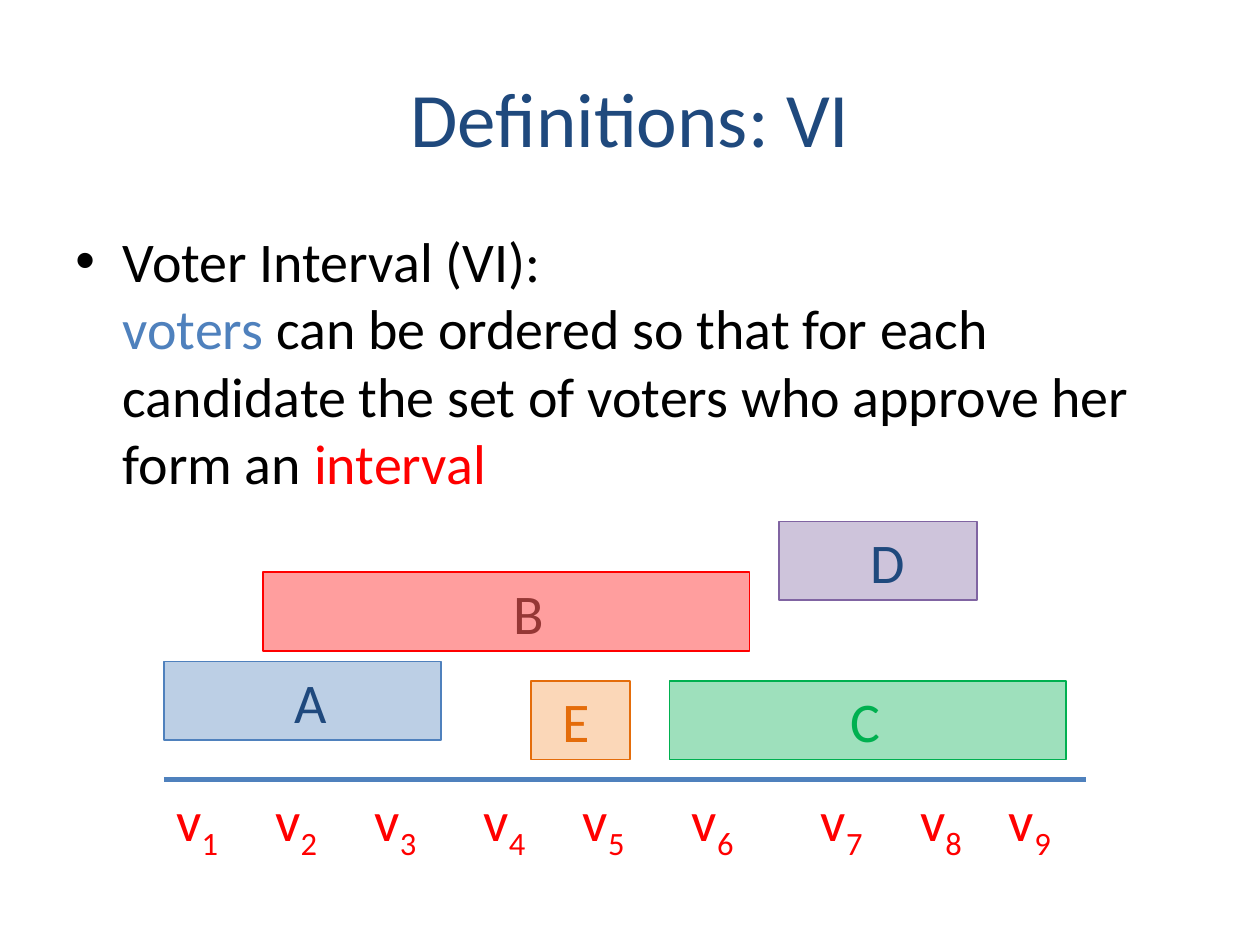
from dataclasses import dataclass

from lxml.etree import SubElement
from pptx import Presentation
from pptx.dml.color import RGBColor
from pptx.enum.shapes import MSO_CONNECTOR, MSO_SHAPE
from pptx.enum.text import MSO_ANCHOR, PP_ALIGN
from pptx.oxml.ns import qn
from pptx.util import Pt


@dataclass(frozen=True)
class Theme:
    font: str = "Calibri"
    head: int = 44
    text: int = 32
    navy: str = "1F497D"
    blue: str = "4F81BD"
    red: str = "FF0000"
    maroon: str = "953735"
    green: str = "00B050"
    purple: str = "8064A2"
    peach: str = "F79646"
    orange: str = "E46C0A"
    black: str = "000000"
    alpha: int = 38


class Sketch:
    """Draws styled elements on the current slide."""

    def __init__(self, theme, slide):
        self.theme = theme
        self.slide = slide

    def run(self, para, text, color, size=None, sub=False):
        run = para.add_run()
        run.text = text
        font = run.font
        font.name = self.theme.font
        font.size = Pt(size or self.theme.text)
        font.color.rgb = RGBColor.from_string(color)
        if sub:
            font._element.set("baseline", "-25000")

    def box(self, left, top, width, height, wrap=True):
        frame = self.slide.shapes.add_textbox(
            Pt(left), Pt(top), Pt(width), Pt(height)).text_frame
        frame.word_wrap = wrap
        return frame

    def title(self, text, *area):
        frame = self.box(*area)
        frame.vertical_anchor = MSO_ANCHOR.MIDDLE
        para = frame.paragraphs[0]
        para.alignment = PP_ALIGN.CENTER
        self.run(para, text, self.theme.navy, self.theme.head)

    def bullet(self, lines, *area):
        para = self.box(*area).paragraphs[0]
        props = para._p.get_or_add_pPr()
        props.set("marL", str(Pt(27)))
        props.set("indent", str(Pt(-27)))
        SubElement(props, qn("a:buFont"), typeface="Arial")
        SubElement(props, qn("a:buChar"), char="•")
        for row, parts in enumerate(lines):
            if row:
                para.add_line_break()
            for text, color in parts:
                self.run(para, text, color)

    def label(self, left, top, width, text, color, sub=""):
        para = self.box(left, top, width, 46, wrap=False).paragraphs[0]
        self.run(para, text, color)
        if sub:
            self.run(para, sub, color, sub=True)

    def bar(self, left, top, width, fill, edge):
        bar = self.slide.shapes.add_shape(
            MSO_SHAPE.RECTANGLE, Pt(left), Pt(top), Pt(width), Pt(45))
        bar.shadow.inherit = False
        bar.fill.solid()
        bar.fill.fore_color.rgb = RGBColor.from_string(fill)
        tint = bar.fill._xPr.find(qn("a:solidFill"))[0]
        SubElement(tint, qn("a:alpha"), val=str(self.theme.alpha * 1000))
        bar.line.color.rgb = RGBColor.from_string(edge)
        bar.line.width = Pt(1)

    def axis(self, left, right, top):
        line = self.slide.shapes.add_connector(
            MSO_CONNECTOR.STRAIGHT, Pt(left), Pt(top), Pt(right), Pt(top))
        line.line.color.rgb = RGBColor.from_string(self.theme.blue)
        line.line.width = Pt(3)
        SubElement(line._element.spPr, qn("a:effectLst"))


def main():
    deck = Presentation()
    deck.slide_width, deck.slide_height = Pt(720), Pt(540)
    theme = Theme()
    page = Sketch(theme, deck.slides.add_slide(deck.slide_layouts[6]))

    page.title("Definitions: VI", 36, 21.6, 648, 90)
    page.bullet([
        [("Voter Interval (VI):", theme.black)],
        [("voters ", theme.blue),
         ("can be ordered so that for each candidate the set of voters "
          "who approve her form an ", theme.black),
         ("interval", theme.red)],
    ], 36, 126, 648, 356.4)

    bars = [
        ("A", 93.6, 378, 158.4, theme.blue, theme.blue, 161.3, theme.navy),
        ("B", 150.3, 327, 278, theme.red, theme.red, 286.6, theme.maroon),
        ("C", 382.5, 389, 226.8, theme.green, theme.green, 478.8, theme.green),
        ("D", 445, 298, 113.4, theme.purple, theme.purple, 490.3, theme.navy),
        ("E", 303.3, 389, 56.7, theme.peach, theme.orange, 314.6, theme.orange),
    ]
    for name, left, top, width, fill, edge, start, color in bars:
        page.bar(left, top, width, fill, edge)
        page.label(start, top, 33, name, color)

    base = 445.5
    page.axis(93.6, 620.6, base)
    spots = [93.6, 150.3, 207, 269.3, 326, 388.3, 462, 518.7, 569.5]
    for rank, left in enumerate(spots, 1):
        page.label(left, base, 40.3, "v", theme.red, str(rank))

    deck.save("out.pptx")


if __name__ == "__main__":
    main()
